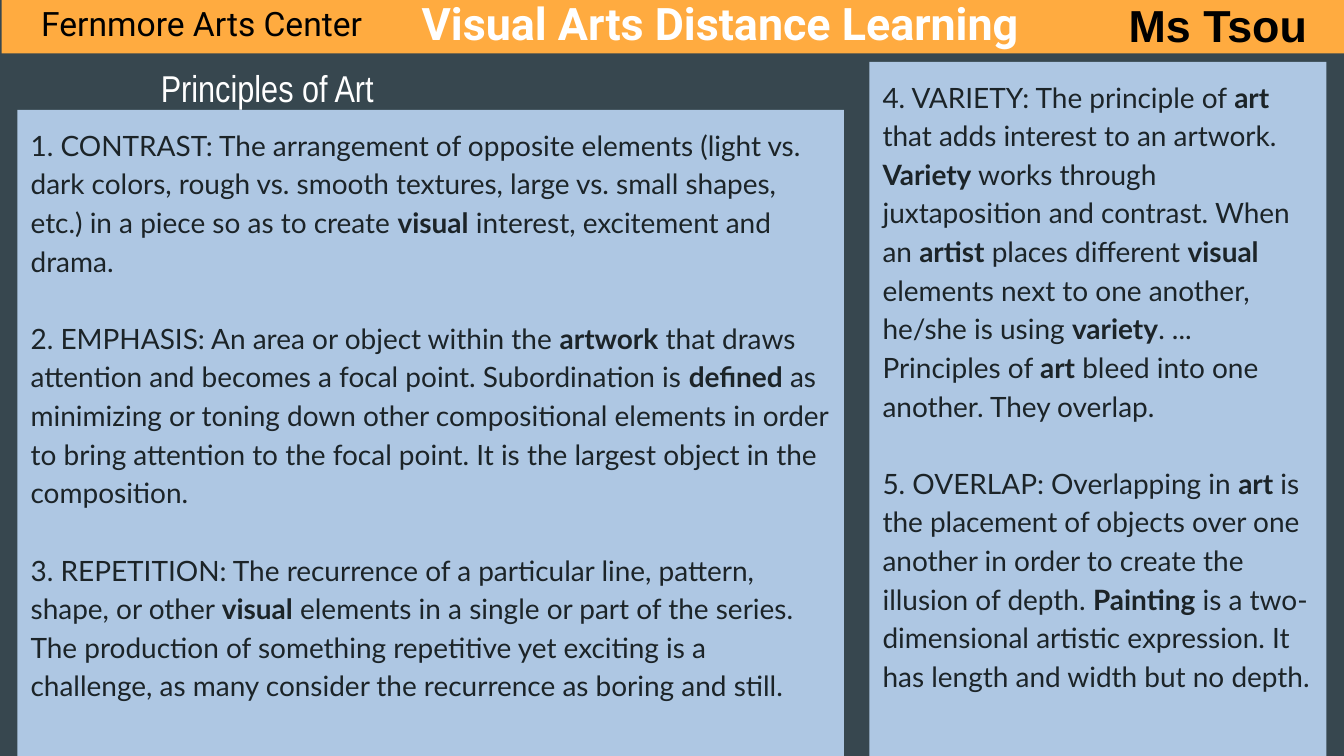
from pptx import Presentation
from pptx.dml.color import RGBColor
from pptx.enum.shapes import MSO_SHAPE
from pptx.enum.text import MSO_ANCHOR, PP_ALIGN
from pptx.util import Cm, Pt

RECT = MSO_SHAPE.RECTANGLE
TOP = MSO_ANCHOR.TOP
LEFT = PP_ALIGN.LEFT

COLORS = {
    "slate": "37474F",
    "orange": "FFAB40",
    "panel": "AEC7E3",
    "ink": "1C2428",
    "white": "FFFFFF",
    "black": "000000",
}

LEFT_PRINCIPLES = [
    "1. CONTRAST: The arrangement of opposite elements (light vs. dark colors, "
    "rough vs. smooth textures, large vs. small shapes, etc.) in a piece so as to "
    "create *visual* interest, excitement and drama.",
    "2. EMPHASIS: An area or object within the *artwork* that draws attention and "
    "becomes a focal point. Subordination is *defined* as minimizing or toning down "
    "other compositional elements in order to bring attention to the focal point. "
    "It is the largest object in the composition.",
    "3. REPETITION: The recurrence of a particular line, pattern, shape, or other "
    "*visual* elements in a single or part of the series. The production of something "
    "repetitive yet exciting is a challenge, as many consider the recurrence as "
    "boring and still.",
]
RIGHT_PRINCIPLES = [
    "4. VARIETY: The principle of *art* that adds interest to an artwork. *Variety* "
    "works through juxtaposition and contrast. When an *artist* places different "
    "*visual* elements next to one another, he/she is using *variety*. ... Principles "
    "of *art* bleed into one another. They overlap.",
    "5. OVERLAP: Overlapping in *art* is the placement of objects over one another in "
    "order to create the illusion of depth. *Painting* is a two-dimensional artistic "
    "expression. It has length and width but no depth.",
]


def rgb(name):
    return RGBColor.from_string(COLORS[name])


def set_frame(tf):
    tf.word_wrap = True
    tf.vertical_anchor = TOP
    tf.margin_left = tf.margin_right = Cm(0.25)
    tf.margin_top = tf.margin_bottom = Cm(0.25)


def set_font(p, name, size, color, bold=False):
    p.alignment = LEFT
    p.font.name = name
    p.font.size = Pt(size)
    p.font.color.rgb = rgb(color)
    p.font.bold = bold


def add_rect(slide, x, y, w, h, color):
    sp = slide.shapes.add_shape(RECT, Cm(x), Cm(y), Cm(w), Cm(h))
    sp.shadow.inherit = False
    sp.fill.solid()
    sp.fill.fore_color.rgb = rgb(color)
    sp.line.fill.background()
    return sp


def add_label(slide, x, y, w, h, text, font, size, color, bold=False):
    tf = slide.shapes.add_textbox(Cm(x), Cm(y), Cm(w), Cm(h)).text_frame
    set_frame(tf)
    p = tf.paragraphs[0]
    p.text = text
    set_font(p, font, size, color, bold)


def add_banner(slide, x, y, w, h):
    add_rect(slide, x, y, w, h, "orange")
    add_label(slide, x + 7.69, y - 0.15, 12.5, h,
              "Visual Arts Distance Learning", "Roboto", 24, "white", True)
    add_label(slide, x + 0.5, y - 0.02, 8.38, 1.02,
              "Fernmore Arts Center", "Roboto", 18, "black")
    add_label(slide, x + 21.05, y - 0.12, 4.34, 1.27,
              "Ms Tsou", "Arial", 24, "black", True)


def add_panel(slide, x, y, w, h, principles):
    tf = add_rect(slide, x, y, w, h, "panel").text_frame
    set_frame(tf)
    for i, text in enumerate(principles):
        p = tf.add_paragraph() if i else tf.paragraphs[0]
        set_font(p, "Lato", 15, "ink")
        p.line_spacing = 1.15
        if i < len(principles) - 1:
            p.space_after = Pt(20.7)
        for j, part in enumerate(text.split("*")):
            r = p.add_run()
            r.text = part
            if j % 2:
                r.font.bold = True


def add_titled_panel(slide, x, y, w, h, title, principles):
    add_label(slide, x + 2.46, y, 5.92, 1.32, title, "Arial Narrow", 20, "white")
    add_panel(slide, x, y + 1.09, w, h - 1.09, principles)


def main():
    prs = Presentation()
    prs.slide_width = Cm(25.4)
    prs.slide_height = Cm(14.29)
    s = prs.slides.add_slide(prs.slide_layouts[6])
    s.background.fill.solid()
    s.background.fill.fore_color.rgb = rgb("slate")
    add_panel(s, 16.43, 1.17, 8.64, 14.38, RIGHT_PRINCIPLES)
    add_banner(s, 0.03, -0.18, 25.37, 1.19)
    add_titled_panel(s, 0.33, 0.99, 15.62, 14.43, "Principles of Art", LEFT_PRINCIPLES)
    prs.save("out.pptx")


if __name__ == "__main__":
    main()
